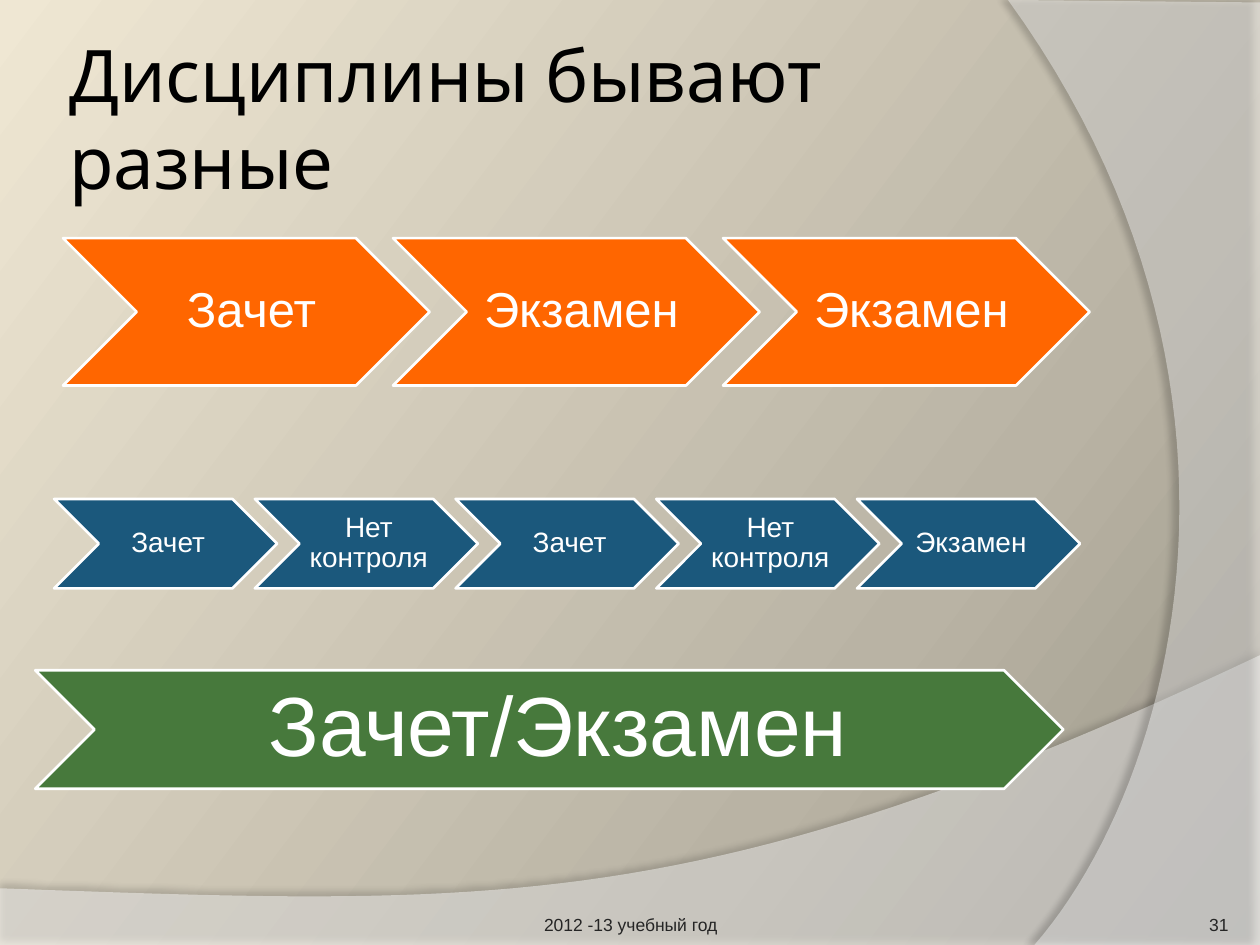
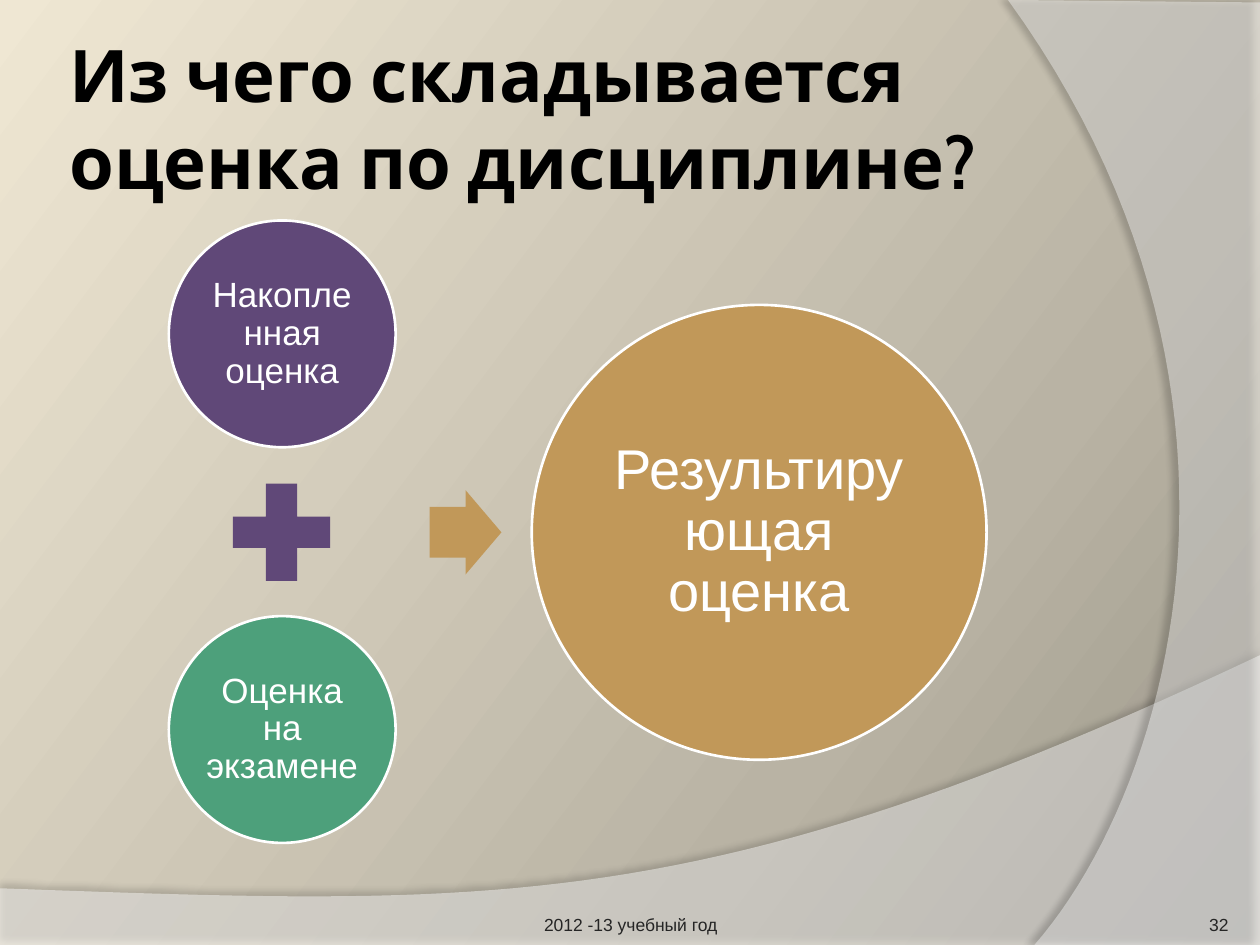
import copy
import lxml.etree
import pptx
import pptx.util
import pptx.dml.color
import pptx.enum.shapes
import pptx.enum.text
import pptx.oxml.ns

Inches = pptx.util.Inches
Pt = pptx.util.Pt
RGB = pptx.dml.color.RGBColor.from_string
Kind = pptx.enum.shapes.MSO_SHAPE
Align = pptx.enum.text.PP_ALIGN
Anchor = pptx.enum.text.MSO_ANCHOR
qn = pptx.oxml.ns.qn


class Theme:
    head = "Cabin"
    body = "Arial"
    black = "000000"
    white = "FFFFFF"
    grey = "252525"
    orange = "FF6600"
    blue = "1B587C"
    green = "47793C"
    purple = "604878"
    teal = "4DA07B"
    gold = "C19859"
    stops = ((0, "9B9689"), (0.3, "B9B3A4"), (1, "EFE7D3"))
    title = 41.4
    foot = 10
    large = 48
    result = 32
    medium = 28
    score = 20
    small = 16


def write(shape, text, font, color, align, anchor, pads, space=1.0):
    frame = shape.text_frame
    left, top, right, bottom = [Inches(pad) for pad in pads]
    form = dict(word_wrap=True, vertical_anchor=anchor, margin_left=left,
                margin_top=top, margin_right=right, margin_bottom=bottom)
    para = frame.paragraphs[0]
    run = para.add_run()
    run.text = text
    run.font.color.rgb = RGB(color)
    for item, values in ((frame, form), (run.font, font),
                         (para, dict(alignment=align, line_spacing=space))):
        for key, value in values.items():
            setattr(item, key, value)


def draw(slide, kind, box, fill, text="", size=0, pads=(0, 0, 0, 0), edge=True):
    shape = slide.shapes.add_shape(kind, *[Inches(side) for side in box])
    shape.shadow.inherit = False
    shape.fill.solid()
    shape.fill.fore_color.rgb = RGB(fill)
    if edge:
        shape.line.color.rgb = RGB(Theme.white)
        shape.line.width = Pt(1.5)
    else:
        shape.line.fill.background()
    if text:
        write(shape, text, dict(name=Theme.body, size=Pt(size)), Theme.white,
              Align.CENTER, Anchor.MIDDLE, pads, 0.9)
    return shape


deck = pptx.Presentation()
deck.slide_width = Inches(10)
deck.slide_height = Inches(7.5)

waves = (
    dict(start=[(0, 7.05), (0, 7.51), (10, 7.51)],
         curve=[(10, 5.2), (5.59, 7.29), (3.91, 7.19), (0, 7.05)],
         alpha=45, shade=35, dist=3.5, angle=270),
    dict(start=[(10, 0.02), (10, 7.5)],
         curve=[(8.21, 7.5), (9.35, 6.19), (10.18, 3), (8, 0)],
         alpha=40, shade=45, dist=4, angle=180),
)
heads = (
    ("Дисциплины бывают разные", False, "31"),
    ("Из чего складывается оценка по дисциплине?", True, "32"),
)
steps = 48

for title, bold, page in heads:
    slide = deck.slides.add_slide(deck.slide_layouts[6])
    back = slide.background.fill
    back.gradient()
    back.gradient_angle = 143
    first = slide.element.find(".//" + qn("a:gs"))
    first.addnext(copy.deepcopy(first))
    for stop, (place, color) in zip(back.gradient_stops, Theme.stops):
        stop.position = place
        stop.color.rgb = RGB(color)

    for wave in waves:
        dots = list(wave["start"])
        for step in range(steps + 1):
            t = step / steps
            rates = ((1 - t) ** 3, 3 * t * (1 - t) ** 2, 3 * t ** 2 * (1 - t), t ** 3)
            dots.append([sum(rate * dot[axis] for rate, dot in zip(rates, wave["curve"]))
                         for axis in (0, 1)])
        spots = [(Inches(x), Inches(y)) for x, y in dots]
        pen = slide.shapes.build_freeform(*spots[0])
        pen.add_line_segments(spots[1:], close=True)
        shape = pen.convert_to_shape()
        shape.fill.solid()
        shape.fill.fore_color.rgb = RGB(Theme.white)
        shape.line.fill.background()
        shape.shadow.inherit = False
        props = shape.element.spPr
        tint = props.find(qn("a:solidFill")).find(qn("a:srgbClr"))
        lxml.etree.SubElement(tint, qn("a:alpha"), val=str(wave["alpha"] * 1000))
        shade = lxml.etree.SubElement(
            props.find(qn("a:effectLst")), qn("a:outerShdw"), blurRad=str(Pt(4)),
            dist=str(Pt(wave["dist"])), dir=str(wave["angle"] * 60000),
            algn="ctr", rotWithShape="0")
        tone = lxml.etree.SubElement(shade, qn("a:srgbClr"), val=Theme.black)
        lxml.etree.SubElement(tone, qn("a:alpha"), val=str(wave["shade"] * 1000))

    small = dict(name=Theme.body, size=Pt(Theme.foot))
    large = dict(name=Theme.head, size=Pt(Theme.title), bold=bold)
    for box, text, font, color, align, anchor, pads in (
        ((0.5, 0.3, 8.17, 1.25), title, large, Theme.black,
         Align.LEFT, Anchor.MIDDLE, (0.05,) * 4),
        ((3.42, 7.02, 3.17, 0.4), "2012 -13 учебный год", small, Theme.grey,
         Align.CENTER, Anchor.BOTTOM, (0, 0.05, 0, 0)),
        ((8.92, 7.02, 0.83, 0.4), page, small, Theme.grey,
         Align.RIGHT, Anchor.BOTTOM, (0,) * 4),
    ):
        label = slide.shapes.add_textbox(*[Inches(side) for side in box])
        write(label, text, font, color, align, anchor, pads)

types, grade = deck.slides

rows = (
    (0.5, 1.89, 2.91, 1.17, Theme.orange, Theme.medium, 0.04,
     ("Зачет", "Экзамен", "Экзамен")),
    (0.43, 3.96, 1.77, 0.71, Theme.blue, Theme.small, 0.02,
     ("Зачет", "Нет контроля", "Зачет", "Нет контроля", "Экзамен")),
    (0.28, 5.32, 8.16, 0.94, Theme.green, Theme.large, 0.07,
     ("Зачет/Экзамен",)),
)
for left, top, width, height, fill, size, pad, names in rows:
    for spot, name in enumerate(names):
        draw(types, Kind.CHEVRON, (left + spot * width * 0.9, top, width, height),
             fill, name, size, (3 * pad, pad, pad, pad))

for left, top, side, fill, text, size, pad in (
    (1.34, 1.75, 1.8, Theme.purple, "Накопленная оценка", Theme.score, 0.03),
    (1.34, 4.89, 1.8, Theme.teal, "Оценка на экзамене", Theme.score, 0.03),
    (4.22, 2.42, 3.61, Theme.gold, "Результирующая оценка", Theme.result, 0.04),
):
    draw(grade, Kind.OVAL, (left, top, side, side), fill, text, size, (pad,) * 4)

draw(grade, Kind.MATH_PLUS, (1.71, 3.7, 1.05, 1.05), Theme.purple, edge=False)
arrow = draw(grade, Kind.RIGHT_ARROW, (3.41, 3.89, 0.57, 0.67), Theme.gold, edge=False)
arrow.adjustments[0] = 0.6
arrow.adjustments[1] = 0.5

deck.save("out.pptx")
